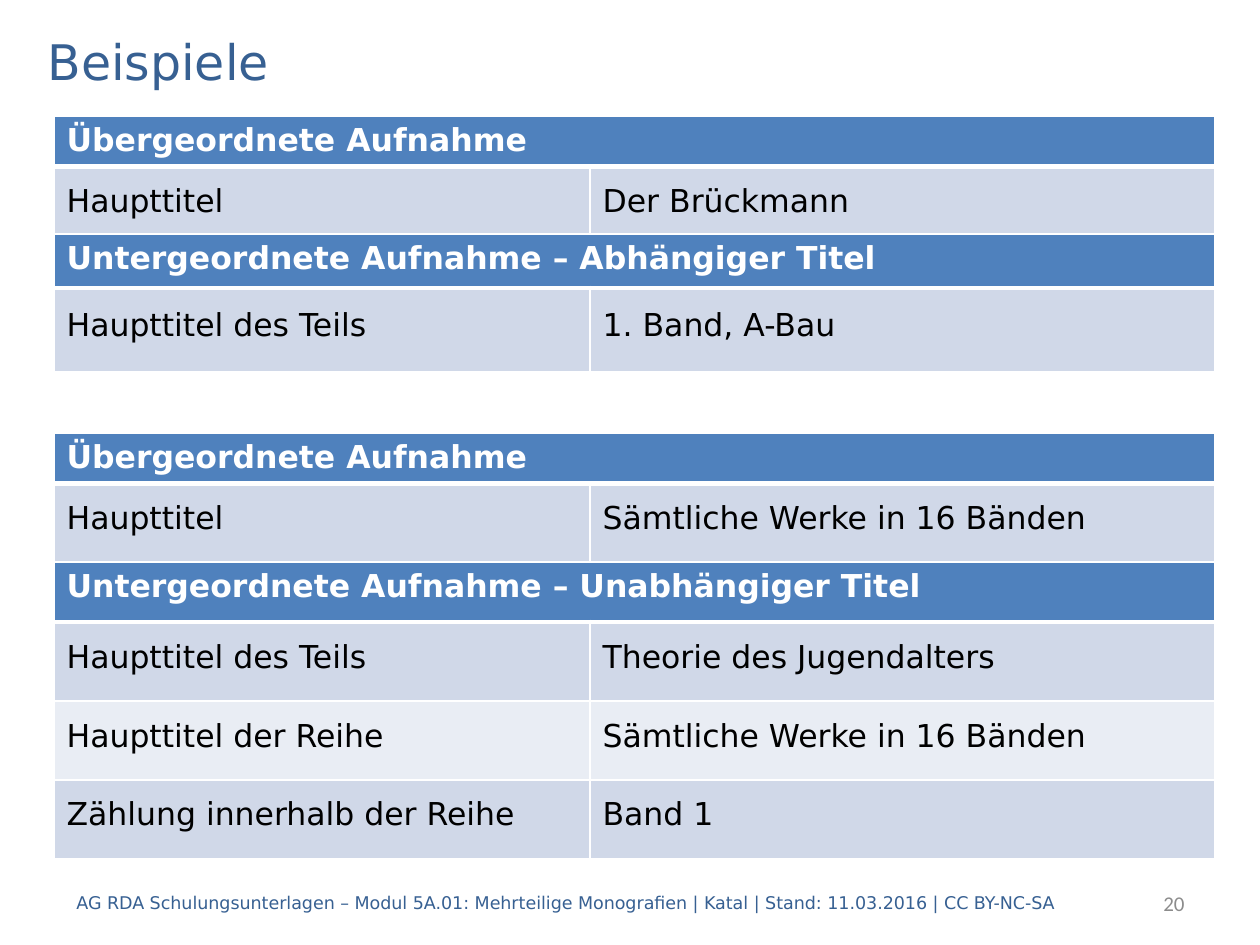
from lxml.etree import SubElement
from pptx import Presentation
from pptx.dml.color import RGBColor
from pptx.enum.text import MSO_ANCHOR, PP_ALIGN
from pptx.oxml.ns import qn
from pptx.util import Pt

PX = 914400 / 126
TITLE_BLUE = RGBColor(0x37, 0x60, 0x92)
HEADER_BLUE = RGBColor(0x4F, 0x81, 0xBD)
BAND_DARK = RGBColor(0xD0, 0xD8, 0xE8)
BAND_LIGHT = RGBColor(0xE9, 0xED, 0xF4)
WHITE = RGBColor(0xFF, 0xFF, 0xFF)
BLACK = RGBColor(0x00, 0x00, 0x00)
GREY = RGBColor(0x8C, 0x8C, 0x8C)
FONT = "DejaVu Sans"
TABLE_LEFT = 54
COLUMN_WIDTHS = (536, 625)


def px(length):
    return round(length * PX)


def write(paragraph, text, size, color, font=FONT, bold=False):
    run = paragraph.add_run()
    run.text = text
    run.font.name = font
    run.font.size = Pt(size)
    run.font.bold = bold
    run.font.color.rgb = color


def set_borders(cell, top=1, bottom=1):
    properties = cell._tc.get_or_add_tcPr()
    for side, width in (("L", 1), ("R", 1), ("T", top), ("B", bottom)):
        line = SubElement(properties, qn(f"a:ln{side}"), w=str(Pt(width)))
        fill = SubElement(line, qn("a:solidFill"))
        SubElement(fill, qn("a:srgbClr"), val=str(WHITE))


def fill_cell(cell, color):
    cell.fill.solid()
    cell.fill.fore_color.rgb = color


def add_title(slide, left, top, width, height):
    title = slide.shapes.title
    title.left, title.top, title.width, title.height = map(px, (left, top, width, height))
    title.text_frame.vertical_anchor = MSO_ANCHOR.MIDDLE
    heading = title.text_frame.paragraphs[0]
    heading.alignment = PP_ALIGN.LEFT
    write(heading, "Beispiele", 28, TITLE_BLUE)


def add_record(slide, top, header_height, row_height, header, entries):
    height = header_height + row_height * len(entries)
    record = slide.shapes.add_table(
        len(entries) + 1, 2, px(TABLE_LEFT), px(top), px(sum(COLUMN_WIDTHS)), px(height)
    ).table
    for column, width in zip(record.columns, COLUMN_WIDTHS):
        column.width = px(width)
    record.rows[0].height = px(header_height)

    header_cell = record.cell(0, 0)
    header_cell.merge(record.cell(0, 1))
    for cell in record.rows[0].cells:
        set_borders(cell, bottom=3)
        fill_cell(cell, HEADER_BLUE)
    write(header_cell.text_frame.paragraphs[0], header, 18, WHITE, bold=True)

    for row, entry in enumerate(entries, start=1):
        record.rows[row].height = px(row_height)
        for cell, text in zip(record.rows[row].cells, entry):
            set_borders(cell, top=3 if row == 1 else 1)
            fill_cell(cell, BAND_DARK if row % 2 else BAND_LIGHT)
            cell.vertical_anchor = MSO_ANCHOR.MIDDLE
            paragraph = cell.text_frame.paragraphs[0]
            paragraph.line_spacing = Pt(16)
            paragraph.space_before = paragraph.space_after = Pt(6)
            write(paragraph, text, 18, BLACK)


def add_footer_text(slide, left, top, width, height, text, size, color, font, alignment):
    frame = slide.shapes.add_textbox(*map(px, (left, top, width, height))).text_frame
    frame.word_wrap = True
    frame.vertical_anchor = MSO_ANCHOR.MIDDLE
    frame.paragraphs[0].alignment = alignment
    write(frame.paragraphs[0], text, size, color, font)


def add_footer(slide, left, top, height):
    add_footer_text(
        slide, left, top, 1052, height,
        "AG RDA Schulungsunterlagen – Modul 5A.01: Mehrteilige Monografien"
        " | Katal | Stand: 11.03.2016 | CC BY-NC-SA",
        10, TITLE_BLUE, FONT, PP_ALIGN.LEFT,
    )
    add_footer_text(
        slide, left + 933, top, 200, height, "20", 12, GREY, "Calibri", PP_ALIGN.RIGHT
    )


def main():
    presentation = Presentation()
    presentation.slide_width = px(1260)
    presentation.slide_height = px(945)
    slide = presentation.slides.add_slide(presentation.slide_layouts[5])

    add_footer(slide, 64, 878, 50)
    add_title(slide, 35, 25, 1191, 71)
    add_record(slide, 116, 50, 79, "Übergeordnete Aufnahme", [("Haupttitel", "Der Brückmann")])
    add_record(
        slide, 234, 54, 84, "Untergeordnete Aufnahme – Abhängiger Titel",
        [("Haupttitel des Teils", "1. Band, A-Bau")],
    )
    add_record(
        slide, 433, 50, 79, "Übergeordnete Aufnahme",
        [("Haupttitel", "Sämtliche Werke in 16 Bänden")],
    )
    add_record(
        slide, 562, 60, 79, "Untergeordnete Aufnahme – Unabhängiger Titel",
        [
            ("Haupttitel des Teils", "Theorie des Jugendalters"),
            ("Haupttitel der Reihe", "Sämtliche Werke in 16 Bänden"),
            ("Zählung innerhalb der Reihe", "Band 1"),
        ],
    )
    presentation.save("out.pptx")


if __name__ == "__main__":
    main()
